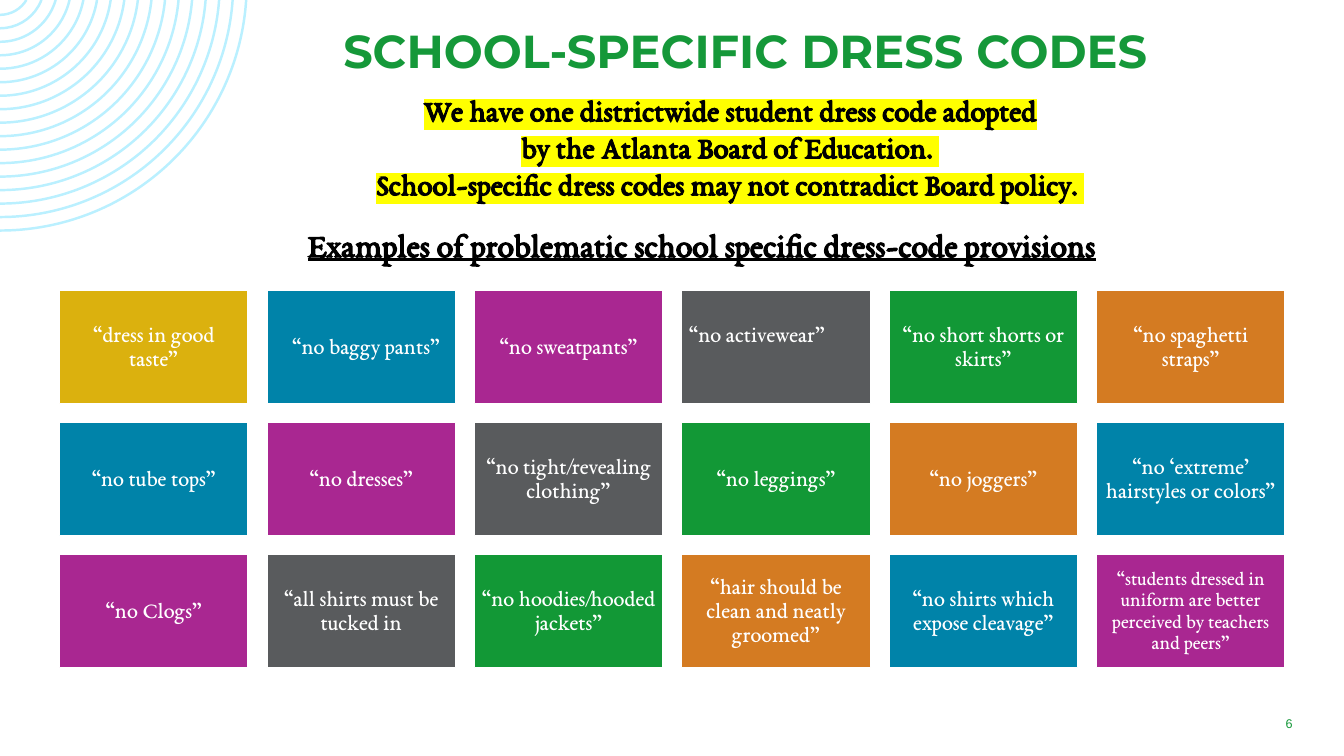
from math import asin, cos, degrees

from lxml.etree import SubElement
from pptx import Presentation
from pptx.dml.color import RGBColor
from pptx.enum.shapes import MSO_SHAPE as SHAPE
from pptx.enum.text import MSO_ANCHOR as ANCHOR, MSO_AUTO_SIZE as AUTO, PP_ALIGN as ALIGN
from pptx.oxml.ns import qn
from pptx.util import Pt

COLORS = {
    "gold": "DBB10E", "blue": "0083A9", "purple": "A92791", "gray": "595B5D",
    "green": "129836", "orange": "D47B22", "title": "159839", "rings": "BAF0FF",
    "white": "FFFFFF", "black": "000000", "highlight": "FFFF00",
}
BODY_FONT = "EB Garamond"
TITLE = "SCHOOL-SPECIFIC DRESS CODES"
POLICY = [
    "We have one districtwide student dress code adopted",
    "by the Atlanta Board of Education. ",
    "School-specific dress codes may not contradict Board policy. ",
]
EXAMPLES_HEADING = "Examples of problematic school specific dress-code provisions"
PROVISIONS = [
    "“dress in good taste”", "“no baggy pants”", "“no sweatpants”",
    "“no activewear”", "“no short shorts or skirts”", "“no spaghetti straps”",
    "“no tube tops”", "“no dresses”", "“no tight/revealing clothing”",
    "“no leggings”", "“no joggers”", "“no ‘extreme’ hairstyles or colors”",
    "“no Clogs”", "“all shirts must be tucked in", "“no hoodies/hooded jackets”",
    "“hair should be clean and neatly groomed”",
    "“no shirts which expose cleavage”",
    "“students dressed in uniform are better perceived by teachers and peers”",
]
TILE_CYCLE = ["blue", "purple", "gray", "green", "orange"]
BAGGY, ACTIVEWEAR, UNIFORM = 1, 3, 17  # tiles with their own text layout

# Lengths in points
COLUMNS = 6
GRID_LEFT, GRID_TOP = 42.5, 207.5
TILE_W, TILE_H = 134.7, 80.8
PITCH_X, PITCH_Y = 148.15, 94.3
TILE_INSET = 5
RING_COUNT, RING_STEP, RING_WIDTH = 17, 9.63, 1.75
RING_OUTER, RING_CENTER_Y = 176.2, -11.5


def rgb(name):
    return RGBColor.from_string(COLORS[name])


def set_insets(tf, left, top, right, bottom):
    tf.margin_left, tf.margin_top = Pt(left), Pt(top)
    tf.margin_right, tf.margin_bottom = Pt(right), Pt(bottom)


def add_run(p, text, size, color, font=BODY_FONT, bold=False):
    r = p.add_run()
    r.text = text
    r.font.size, r.font.name, r.font.bold = Pt(size), font, bold
    r.font.color.rgb = rgb(color)
    return r


def highlight(r):
    rpr = r.font._element
    mark = SubElement(rpr, qn("a:highlight"))
    SubElement(mark, qn("a:srgbClr"), val=COLORS["highlight"])
    rpr.find(qn("a:latin")).addprevious(mark)


def write_lines(sp, box, lines, size, color, font=BODY_FONT, bold=True):
    """Place a text shape and fill it with centred lines; return the runs."""
    sp.left, sp.top, sp.width, sp.height = (Pt(v) for v in box)
    tf = sp.text_frame
    tf.word_wrap, tf.auto_size = True, AUTO.NONE
    tf.vertical_anchor = ANCHOR.TOP
    set_insets(tf, 7.2, 3.6, 7.2, 3.6)
    runs = []
    for i, line in enumerate(lines):
        p = tf.add_paragraph() if i else tf.paragraphs[0]
        p.alignment = ALIGN.CENTER
        runs.append(add_run(p, line, size, color, font, bold))
    return runs


def add_rings(shapes):
    """Draw concentric arcs from the slide's top edge to its left edge."""
    radii = [RING_OUTER - i * RING_STEP for i in range(RING_COUNT)]
    starts = [asin(-RING_CENTER_Y / radius) for radius in radii]
    builder = shapes.build_freeform()
    for radius, start in zip(radii, starts):
        builder.move_to(Pt(radius * cos(start)), 0)
        builder.add_line_segments([(0, Pt(RING_CENTER_Y + radius))], close=False)
    s = builder.convert_to_shape()
    s.shadow.inherit = False
    s.fill.background()
    s.line.color.rgb = rgb("rings")
    s.line.width = Pt(RING_WIDTH)
    segments = list(s._element.iter(qn("a:lnTo")))
    for segment, radius, start in zip(segments, radii, starts):
        angle = round(degrees(start) * 60000)
        curve = SubElement(segment.getparent(), qn("a:arcTo"),
                           wR=str(Pt(radius)), hR=str(Pt(radius)),
                           stAng=str(angle), swAng=str(90 * 60000 - angle))
        segment.getparent().replace(segment, curve)


def add_tile(shapes, i, text):
    row, col = divmod(i, COLUMNS)
    s = shapes.add_shape(SHAPE.RECTANGLE, Pt(GRID_LEFT + col * PITCH_X),
                         Pt(GRID_TOP + row * PITCH_Y), Pt(TILE_W), Pt(TILE_H))
    s.shadow.inherit = False
    s.fill.solid()
    s.fill.fore_color.rgb = rgb(TILE_CYCLE[(i - 1) % len(TILE_CYCLE)] if i else "gold")
    s.line.color.rgb = rgb("white")
    s.line.width = Pt(1)
    tf = s.text_frame
    tf.word_wrap = True
    tf.vertical_anchor = ANCHOR.MIDDLE
    left = TILE_INSET + (7 if i == BAGGY else 0)
    bottom = TILE_INSET + (17 if i == ACTIVEWEAR else 0)
    set_insets(tf, left, TILE_INSET, TILE_INSET, bottom)
    p = tf.paragraphs[0]
    p.alignment = ALIGN.LEFT if i == ACTIVEWEAR else ALIGN.CENTER
    p.line_spacing = 0.9
    add_run(p, text, 14 if i == UNIFORM else 16, "white")


def main():
    prs = Presentation()
    prs.slide_width, prs.slide_height = Pt(960), Pt(540)
    slide = prs.slides.add_slide(prs.slide_layouts[5])
    shapes = slide.shapes

    def text_box():
        return shapes.add_textbox(0, 0, 0, 0)

    add_rings(shapes)
    write_lines(shapes.title, (112.3, 12.2, 840.2, 60.5), [TITLE], 33, "title", "Montserrat")
    for i, text in enumerate(PROVISIONS):
        add_tile(shapes, i, text)
    for r in write_lines(text_box(), (122.4, 61.2, 798.5, 87.1), POLICY, 22, "black"):
        highlight(r)
    heading = write_lines(text_box(), (63.4, 156.2, 875.5, 36), [EXAMPLES_HEADING], 24, "black")
    heading[0].font.underline = True
    number = text_box()
    write_lines(number, (882, 506.2, 77.8, 21.6), ["6"], 9, "title", "Arial", False)
    number.text_frame.vertical_anchor = ANCHOR.MIDDLE
    prs.save("out.pptx")


if __name__ == "__main__":
    main()
